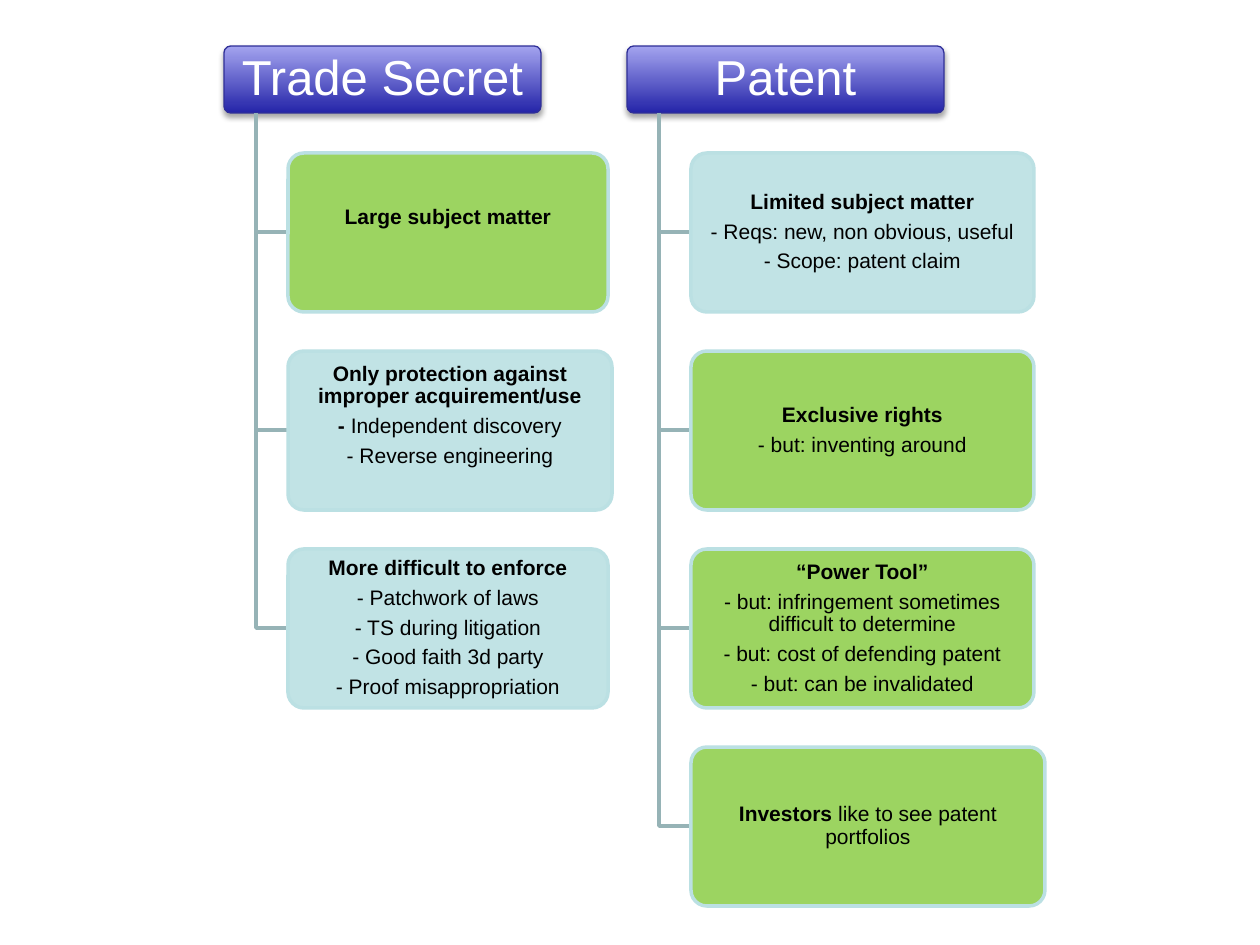
"""Build a slide comparing trade secrets with patents in two branching columns."""
from dataclasses import dataclass

from lxml import etree
from pptx import Presentation
from pptx import util as u
from pptx.dml.color import RGBColor
from pptx.enum import shapes, text
from pptx.oxml.ns import qn

SCALE = 914400 / 126


@dataclass(frozen=True)
class Theme:
    font: str = "Arial"
    header_size: int = 28
    body_size: int = 12
    white: str = "FFFFFF"
    black: str = "000000"
    header_dark: str = "2424A8"
    header_light: str = "A4A4EF"
    header_line: str = "2F2F98"
    branch: str = "96B3B6"
    blue: str = "BBE0E3"
    green: str = "92D050"


theme = Theme()


def px(value):
    return u.Emu(round(value * SCALE))


def add_panel(page, bounds, line, paragraphs, size, color, insets):
    panel = page.shapes.add_shape(
        shapes.MSO_SHAPE.ROUNDED_RECTANGLE, *[px(value) for value in bounds])
    panel.adjustments[0] = 0.1
    panel.shadow.inherit = False
    line_color, line_width = line
    panel.line.color.rgb = RGBColor.from_string(line_color)
    panel.line.width = u.Pt(line_width)
    frame = panel.text_frame
    frame_format = {"word_wrap": True, "vertical_anchor": text.MSO_ANCHOR.MIDDLE}
    for side, inset in zip(("left", "top", "right", "bottom"), insets):
        frame_format[f"margin_{side}"] = px(inset)
    for name, value in frame_format.items():
        setattr(frame, name, value)
    for index, (bold_text, plain_text) in enumerate(paragraphs):
        para = frame.add_paragraph() if index else frame.paragraphs[0]
        para_format = {"alignment": text.PP_ALIGN.CENTER, "line_spacing": 0.9,
                       "space_after": u.Pt(round(size * 0.35))}
        for name, value in para_format.items():
            setattr(para, name, value)
        for words, bold in ((bold_text, True), (plain_text, False)):
            if words:
                span = para.add_run()
                span.text = words
                span_format = {"name": theme.font, "size": u.Pt(size), "bold": bold}
                for name, value in span_format.items():
                    setattr(span.font, name, value)
                span.font.color.rgb = RGBColor.from_string(color)
    return panel


HEADER_TOP, HEADER_WIDTH, HEADER_HEIGHT = 46, 317, 67
CARD_TOP, CARD_HEIGHT, CARD_PITCH = 153, 159, 198
SPINE_INDENT, CARD_INDENT = 32, 64
BLANK_LINE = 30

columns = [
    (224, "Trade Secret", [
        (320, theme.green, BLANK_LINE, [("Large subject matter", "")]),
        (324, theme.blue, BLANK_LINE, [
            ("Only protection against improper acquirement/use", ""),
            ("- ", "Independent discovery"),
            ("", "- Reverse engineering")]),
        (320, theme.blue, 0, [
            ("More difficult to enforce", ""),
            ("", "- Patchwork of laws"),
            ("", "- TS during litigation"),
            ("", "- Good faith 3d party"),
            ("", "- Proof misappropriation")]),
    ]),
    (627, "Patent", [
        (343, theme.blue, 0, [
            ("Limited subject matter", ""),
            ("", "- Reqs: new, non obvious, useful"),
            ("", "- Scope: patent claim")]),
        (343, theme.green, 0, [
            ("Exclusive rights", ""),
            ("", "- but: inventing around")]),
        (343, theme.green, 0, [
            ("“Power Tool”", ""),
            ("", "- but: infringement sometimes difficult to determine"),
            ("", "- but: cost of defending patent"),
            ("", "- but: can be invalidated")]),
        (354, theme.green, 0, [("Investors", " like to see patent portfolios")]),
    ]),
]

deck = Presentation()
deck.slide_width, deck.slide_height = px(1260), px(945)
page = deck.slides.add_slide(deck.slide_layouts[6])

for left, title, cards in columns:
    header = add_panel(
        page, (left, HEADER_TOP, HEADER_WIDTH, HEADER_HEIGHT),
        (theme.header_line, 0.75), [("", title)],
        theme.header_size, theme.white, (8, 5, 8, 5))
    header.fill.gradient()
    header.fill.gradient_angle = 90
    for stop, color in zip(header.fill.gradient_stops,
                           (theme.header_dark, theme.header_light)):
        stop.color.rgb = RGBColor.from_string(color)
    effects = header._element.spPr.find(qn("a:effectLst"))
    shadow = etree.SubElement(
        effects, qn("a:outerShdw"), blurRad=str(u.Pt(3.1)),
        dist=str(u.Pt(1.8)), dir="5400000", rotWithShape="0")
    shade = etree.SubElement(shadow, qn("a:srgbClr"), val=theme.black)
    etree.SubElement(shade, qn("a:alpha"), val="35000")

    spine = left + SPINE_INDENT
    card_left = left + CARD_INDENT
    header_bottom = HEADER_TOP + HEADER_HEIGHT
    for row, (width, fill, bottom_gap, paragraphs) in enumerate(cards):
        top = CARD_TOP + row * CARD_PITCH
        middle = top + CARD_HEIGHT // 2
        builder = page.shapes.build_freeform(spine, header_bottom, scale=SCALE)
        builder.add_line_segments([(spine, middle), (card_left, middle)], close=False)
        branch = builder.convert_to_shape()
        branch.fill.background()
        branch.shadow.inherit = False
        branch.line.color.rgb = RGBColor.from_string(theme.branch)
        branch.line.width = u.Pt(2)

        card = add_panel(
            page, (card_left, top, width, CARD_HEIGHT), (theme.blue, 2),
            paragraphs, theme.body_size, theme.black, (4, 3, 4, 3 + bottom_gap))
        card.fill.solid()
        card.fill.fore_color.rgb = RGBColor.from_string(fill)
        tint = card._element.spPr.find(qn("a:solidFill")).find(qn("a:srgbClr"))
        etree.SubElement(tint, qn("a:alpha"), val="90000")

deck.save("out.pptx")
